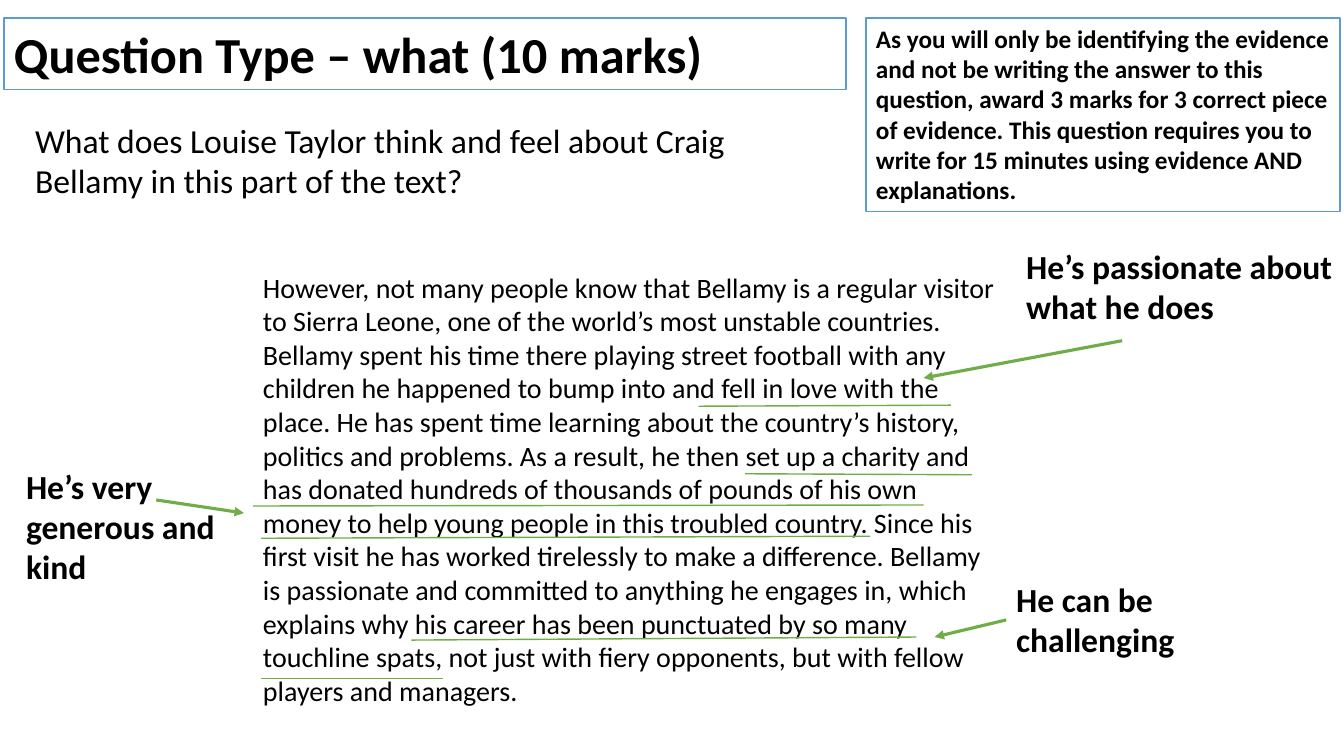
from dataclasses import dataclass

from lxml.etree import SubElement
from pptx import Presentation
from pptx.dml.color import RGBColor
from pptx.enum.shapes import MSO_CONNECTOR, MSO_SHAPE
from pptx.enum.text import MSO_ANCHOR, PP_ALIGN
from pptx.oxml.ns import qn
from pptx.util import Inches, Pt


@dataclass(frozen=True)
class Theme:
    """Colours, font and sizes of the slide."""
    font: str = "Calibri"
    text: RGBColor = RGBColor(0x00, 0x00, 0x00)
    paper: RGBColor = RGBColor(0xFF, 0xFF, 0xFF)
    frame: RGBColor = RGBColor(0x5B, 0x9B, 0xD5)
    marker: RGBColor = RGBColor(0x70, 0xAD, 0x47)
    title_size: int = 36
    prompt_size: int = 24
    extract_size: int = 20
    guidance_size: int = 18
    thin_line: float = 1
    arrow_line: float = 2.25


THEME = Theme()

QUESTION = (
    "What does Louise Taylor think and feel about Craig Bellamy "
    "in this part of the text?"
)
GUIDANCE = (
    "As you will only be identifying the evidence and not be writing the answer "
    "to this question, award 3 marks for 3 correct piece of evidence. This question "
    "requires you to write for 15 minutes using evidence AND explanations."
)
EXTRACT = (
    "However, not many people know that Bellamy is a regular visitor to Sierra Leone, "
    "one of the world’s most unstable countries. Bellamy spent his time there playing "
    "street football with any children he happened to bump into and fell in love with "
    "the place. He has spent time learning about the country’s history, politics and "
    "problems. As a result, he then set up a charity and has donated hundreds of "
    "thousands of pounds of his own money to help young people in this troubled "
    "country. Since his first visit he has worked tirelessly to make a difference. "
    "Bellamy is passionate and committed to anything he engages in, which explains why "
    "his career has been punctuated by so many touchline spats, not just with fiery "
    "opponents, but with fellow players and managers."
)
COMMENTS = [
    ("He’s passionate about what he does", (10.08, 2.39, 3.26, 0.91),
     (11.13, 3.38), (9.16, 3.75)),
    ("He’s very generous and kind", (0.16, 4.57, 2.64, 1.31),
     (1.55, 4.96), (2.42, 5.09)),
    ("He can be challenging", (9.98, 5.69, 2.64, 0.91),
     (9.98, 6.15), (9.27, 6.32)),
]
UNDERLINES = [
    ((6.93, 4.03), (9.43, 4.02)),
    ((7.39, 4.7), (9.64, 4.71)),
    ((2.51, 5.02), (9.16, 5.01)),
    ((2.59, 5.34), (8.63, 5.32)),
    ((4.08, 6.35), (9.09, 6.32)),
    ((2.59, 6.73), (4.39, 6.73)),
]


def write_text(shape, text, size, bold=False):
    """Write left-aligned wrapped text into a shape."""
    frame = shape.text_frame
    frame.word_wrap = True
    frame.vertical_anchor = MSO_ANCHOR.TOP
    paragraph = frame.paragraphs[0]
    paragraph.alignment = PP_ALIGN.LEFT
    run = paragraph.add_run()
    run.text = text
    run.font.name = THEME.font
    run.font.size = Pt(size)
    run.font.bold = bold
    run.font.color.rgb = THEME.text


def add_text(slide, box, text, **text_format):
    """Add a plain text box."""
    shape = slide.shapes.add_textbox(*map(Inches, box))
    write_text(shape, text, **text_format)


def add_framed_text(slide, box, text, **text_format):
    """Add a white rectangle with a thin frame and text."""
    shape = slide.shapes.add_shape(MSO_SHAPE.RECTANGLE, *map(Inches, box))
    shape.shadow.inherit = False
    shape.fill.solid()
    shape.fill.fore_color.rgb = THEME.paper
    shape.line.color.rgb = THEME.frame
    shape.line.width = Pt(THEME.thin_line)
    write_text(shape, text, **text_format)


def add_line(slide, start, end, width, arrow=False):
    """Add a straight marker line, with an arrowhead at its end on request."""
    connector = slide.shapes.add_connector(
        MSO_CONNECTOR.STRAIGHT, *map(Inches, (*start, *end))
    )
    connector.line.color.rgb = THEME.marker
    connector.line.width = Pt(width)
    if arrow:
        outline = connector.get_or_add_ln()
        SubElement(outline, qn("a:tailEnd"), type="triangle")
    SubElement(connector.element.spPr, qn("a:effectLst"))


def main():
    """Build the slide and save it."""
    presentation = Presentation()
    presentation.slide_width = Inches(13.33)
    presentation.slide_height = Inches(7.5)
    slide = presentation.slides.add_slide(presentation.slide_layouts[6])

    add_text(slide, (0.25, 1.14, 7.93, 0.91), QUESTION, size=THEME.prompt_size)
    add_framed_text(slide, (0.04, 0.18, 8.35, 0.71), "Question Type – what (10 marks)",
                    size=THEME.title_size, bold=True)
    add_framed_text(slide, (8.59, 0.18, 4.7, 1.92), GUIDANCE,
                    size=THEME.guidance_size, bold=True)
    add_text(slide, (2.51, 2.63, 7.5, 4.48), EXTRACT, size=THEME.extract_size)

    for start, end in UNDERLINES:
        add_line(slide, start, end, THEME.thin_line)
    for text, box, start, end in COMMENTS:
        add_text(slide, box, text, size=THEME.prompt_size, bold=True)
        add_line(slide, start, end, THEME.arrow_line, arrow=True)

    presentation.save("out.pptx")


if __name__ == "__main__":
    main()
